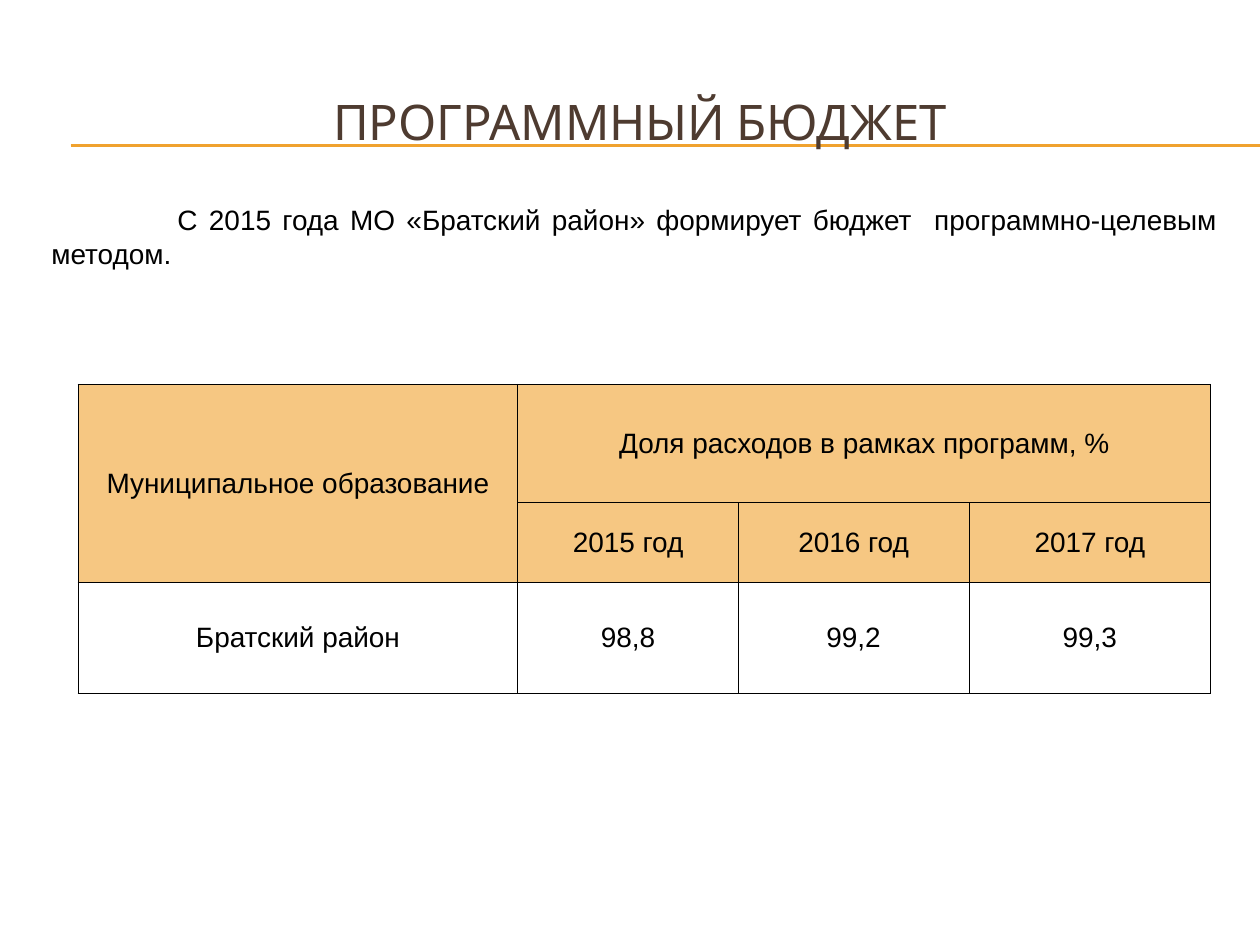
import pptx
import pptx.util
import pptx.dml.color
import pptx.enum.shapes
import pptx.enum.text
import pptx.oxml.ns
import lxml.etree

Inches = pptx.util.Inches
Pt = pptx.util.Pt
Align = pptx.enum.text.PP_ALIGN
Anchor = pptx.enum.text.MSO_ANCHOR
qn = pptx.oxml.ns.qn

INK = "000000"
GOLD = "F0A22E"
SAND = "F6C782"
BROWN = "4E3B30"

COLS = [3.49, 1.75, 1.83, 1.92]
ROWS = [0.94, 0.63, 0.88]
CELLS = [
    ["Муниципальное образование", "Доля расходов в рамках программ, %", "", ""],
    ["", "2015 год", "2016 год", "2017 год"],
    ["Братский район", "98,8", "99,2", "99,3"],
]


def color(code):
    return pptx.dml.color.RGBColor.from_string(code)


def style(para, font, size, code, align):
    para.alignment = align
    para.font.name = font
    para.font.size = Pt(size)
    para.font.color.rgb = color(code)


def add_text(slide, box, text, anchor):
    frame = slide.shapes.add_textbox(*map(Inches, box)).text_frame
    frame.word_wrap = True
    frame.vertical_anchor = anchor
    para = frame.paragraphs[0]
    para.text = text
    return para


def add_rule(slide, left, top, right):
    line = slide.shapes.add_connector(
        pptx.enum.shapes.MSO_CONNECTOR.STRAIGHT,
        Inches(left), Inches(top), Inches(right), Inches(top))
    line.line.color.rgb = color(GOLD)
    line.line.width = Pt(0.75)
    lxml.etree.SubElement(line._element.spPr, qn("a:effectLst"))


def add_title(slide, box):
    left, top, width, height = box
    for drop in (0.65, 0.66):
        add_rule(slide, left + 0.23, top + drop, 10)
    para = add_text(slide, box, "ПРОГРАММНЫЙ БЮДЖЕТ", Anchor.MIDDLE)
    style(para, "Cabin", 28, BROWN, Align.CENTER)


def add_intro(slide, box):
    text = "С 2015 года МО «Братский район» формирует бюджет  программно-целевым методом."
    para = add_text(slide, box, text, Anchor.TOP)
    para._p.get_or_add_pPr().set("indent", str(Inches(1)))
    style(para, "Arial", 16, INK, Align.JUSTIFY)


def add_border(cell):
    props = cell._tc.get_or_add_tcPr()
    for side in ("L", "R", "T", "B"):
        edge = lxml.etree.SubElement(props, qn("a:ln" + side), w=str(Pt(0.5)))
        fill = lxml.etree.SubElement(edge, qn("a:solidFill"))
        lxml.etree.SubElement(fill, qn("a:srgbClr"), val=INK)


def fill_cell(cell, text, head):
    cell.margin_left = cell.margin_right = cell.margin_top = Inches(0.01)
    cell.margin_bottom = 0
    cell.vertical_anchor = Anchor.MIDDLE
    add_border(cell)
    if head:
        cell.fill.solid()
        cell.fill.fore_color.rgb = color(SAND)
    else:
        cell.fill.background()
    para = cell.text_frame.paragraphs[0]
    para.text = text
    style(para, "Arial", 16, INK, Align.CENTER)


def add_shares(slide, box):
    table = slide.shapes.add_table(len(ROWS), len(COLS), *map(Inches, box)).table
    table.first_row = table.horz_banding = False
    for col, width in zip(table.columns, COLS):
        col.width = Inches(width)
    for row, height in zip(table.rows, ROWS):
        row.height = Inches(height)
    for r, texts in enumerate(CELLS):
        for c, text in enumerate(texts):
            fill_cell(table.cell(r, c), text, r < 2)
    table.cell(0, 0).merge(table.cell(1, 0))
    table.cell(0, 1).merge(table.cell(0, 3))


def main():
    deck = pptx.Presentation()
    deck.slide_width = Inches(10)
    deck.slide_height = Inches(7.5)
    slide = deck.slides.add_slide(deck.slide_layouts[6])
    add_title(slide, (0.33, 0.5, 9.5, 0.92))
    add_intro(slide, (0.31, 1.56, 9.45, 0.91))
    add_shares(slide, (0.62, 3.05, sum(COLS), sum(ROWS)))
    deck.save("out.pptx")


if __name__ == "__main__":
    main()
